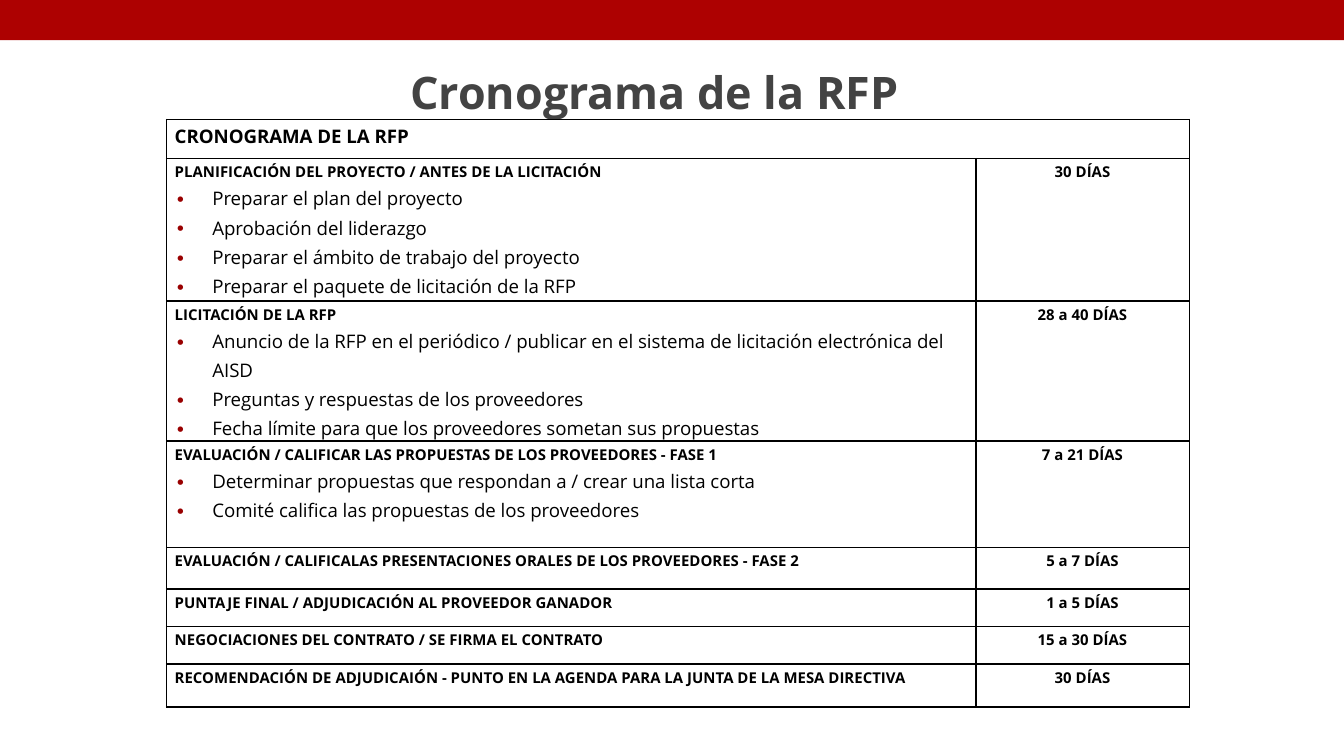
"""Build the RFP schedule slide."""
from typing import NamedTuple

from lxml import etree
from pptx import Presentation
from pptx.dml.color import RGBColor
from pptx.enum.shapes import MSO_SHAPE
from pptx.enum.text import MSO_ANCHOR, PP_ALIGN
from pptx.oxml.ns import qn
from pptx.util import Inches, Pt

RECTANGLE = MSO_SHAPE.RECTANGLE
MIDDLE, TOP = MSO_ANCHOR.MIDDLE, MSO_ANCHOR.TOP
CENTER, LEFT = PP_ALIGN.CENTER, PP_ALIGN.LEFT

FONT = "Open Sans"
COLORS = {"bar": "AD0101", "title": "434343", "text": "000000", "bullet": "990000"}
SLIDE_WIDTH = Inches(10)
SLIDE_HEIGHT = SLIDE_WIDTH * 9 // 16
COLUMN_WIDTHS = (6.02, 1.59)
HEADING_SIZE, STAGE_SIZE, TASK_SIZE = 10, 8, 10
TASK_INDENT = Inches(0.28)


class Stage(NamedTuple):
    name: str
    duration: str
    height: float
    tasks: tuple[str, ...] = ()


HEADING = "CRONOGRAMA DE LA RFP"
HEADING_HEIGHT = 0.29
STAGES = (
    Stage("PLANIFICACIÓN DEL PROYECTO / ANTES DE LA LICITACIÓN", "30 DÍAS", 1.06, (
        "Preparar el plan del proyecto",
        "Aprobación del liderazgo",
        "Preparar el ámbito de trabajo del proyecto",
        "Preparar el paquete de licitación de la RFP",
    )),
    Stage("LICITACIÓN DE LA RFP", "28 a 40 DÍAS", 0.88, (
        "Anuncio de la RFP en el periódico / publicar en el sistema de "
        "licitación electrónica del AISD",
        "Preguntas y respuestas de los proveedores",
        "Fecha límite para que los proveedores sometan sus propuestas",
    )),
    Stage("EVALUACIÓN / CALIFICAR LAS PROPUESTAS DE LOS PROVEEDORES - FASE 1", "7 a 21 DÍAS", 0.79, (
        "Determinar propuestas que respondan a / crear una lista corta",
        "Comité califica las propuestas de los proveedores",
    )),
    Stage("EVALUACIÓN / CALIFICALAS PRESENTACIONES ORALES DE LOS PROVEEDORES - FASE 2",
          "5 a 7 DÍAS", 0.31),
    Stage("PUNTAJE FINAL / ADJUDICACIÓN AL PROVEEDOR GANADOR", "1 a 5 DÍAS", 0.28),
    Stage("NEGOCIACIONES DEL CONTRATO / SE FIRMA EL CONTRATO", "15 a 30 DÍAS", 0.28),
    Stage("RECOMENDACIÓN DE ADJUDICAIÓN - PUNTO EN LA AGENDA PARA LA JUNTA DE LA MESA DIRECTIVA",
          "30 DÍAS", 0.32),
)


def rgb(name: str) -> RGBColor:
    return RGBColor.from_string(COLORS[name])


def format_runs(paragraph, size: float, color: str, bold: bool) -> None:
    for run in paragraph.runs:
        run.font.name = FONT
        run.font.size = Pt(size)
        run.font.bold = bold
        run.font.color.rgb = rgb(color)


def add_bullet(paragraph) -> None:
    properties = paragraph._p.get_or_add_pPr()
    properties.set("marL", str(TASK_INDENT))
    properties.set("indent", str(-TASK_INDENT))
    bullet_color = etree.SubElement(properties, qn("a:buClr"))
    etree.SubElement(bullet_color, qn("a:srgbClr"), val=COLORS["bullet"])
    etree.SubElement(properties, qn("a:buFont"), typeface=FONT)
    etree.SubElement(properties, qn("a:buChar"), char="∙")


def style_cell(cell) -> None:
    cell.margin_left = cell.margin_right = Inches(0.06)
    cell.margin_top = cell.margin_bottom = 0
    cell.vertical_anchor = TOP
    properties = cell._tc.get_or_add_tcPr()
    for side in ("lnL", "lnR", "lnT", "lnB"):
        border = etree.SubElement(properties, qn(f"a:{side}"), w=str(Pt(1)))
        border_fill = etree.SubElement(border, qn("a:solidFill"))
        etree.SubElement(border_fill, qn("a:srgbClr"), val=COLORS["text"])
    cell.fill.background()


def write_cell(cell, label: str, size: float, alignment=LEFT, tasks: tuple[str, ...] = ()) -> None:
    frame = cell.text_frame
    frame.text = "\n".join((label, *tasks))
    for index, paragraph in enumerate(frame.paragraphs):
        is_task = index > 0
        if is_task:
            add_bullet(paragraph)
        paragraph.alignment = alignment
        paragraph.line_spacing = 1.15
        format_runs(paragraph, TASK_SIZE if is_task else size, "text", not is_task)


def add_bar(slide) -> None:
    bar = slide.shapes.add_shape(RECTANGLE, 0, 0, SLIDE_WIDTH, Inches(0.3))
    bar.shadow.inherit = False
    bar.fill.solid()
    bar.fill.fore_color.rgb = rgb("bar")
    bar.line.fill.background()


def write_title(slide) -> None:
    title = slide.shapes.title
    title.left, title.top = Inches(1.32), Inches(0.37)
    title.width, title.height = Inches(7.1), Inches(0.62)
    frame = title.text_frame
    frame.text = "Cronograma de la RFP"
    frame.word_wrap = True
    frame.vertical_anchor = MIDDLE
    frame.margin_left = frame.margin_right = Inches(0.07)
    frame.margin_top = frame.margin_bottom = Inches(0.04)
    heading = frame.paragraphs[0]
    heading.alignment = CENTER
    format_runs(heading, 24, "title", True)


def add_schedule(slide) -> None:
    heights = (HEADING_HEIGHT, *(stage.height for stage in STAGES))
    schedule = slide.shapes.add_table(
        len(heights), len(COLUMN_WIDTHS), Inches(1.24), Inches(0.89),
        Inches(sum(COLUMN_WIDTHS)), Inches(sum(heights))).table
    schedule.first_row = schedule.horz_banding = False
    for column, width in zip(schedule.columns, COLUMN_WIDTHS):
        column.width = Inches(width)
    for row, height in zip(schedule.rows, heights):
        row.height = Inches(height)
    for cell in schedule.iter_cells():
        style_cell(cell)
    schedule.cell(0, 0).merge(schedule.cell(0, 1))
    write_cell(schedule.cell(0, 0), HEADING, HEADING_SIZE)
    for row_index, stage in enumerate(STAGES, start=1):
        write_cell(schedule.cell(row_index, 0), stage.name, STAGE_SIZE, tasks=stage.tasks)
        write_cell(schedule.cell(row_index, 1), stage.duration, STAGE_SIZE, CENTER)


def main() -> None:
    presentation = Presentation()
    presentation.slide_width = SLIDE_WIDTH
    presentation.slide_height = SLIDE_HEIGHT
    slide = presentation.slides.add_slide(presentation.slide_layouts[5])
    add_bar(slide)
    write_title(slide)
    add_schedule(slide)
    presentation.save("out.pptx")


if __name__ == "__main__":
    main()
